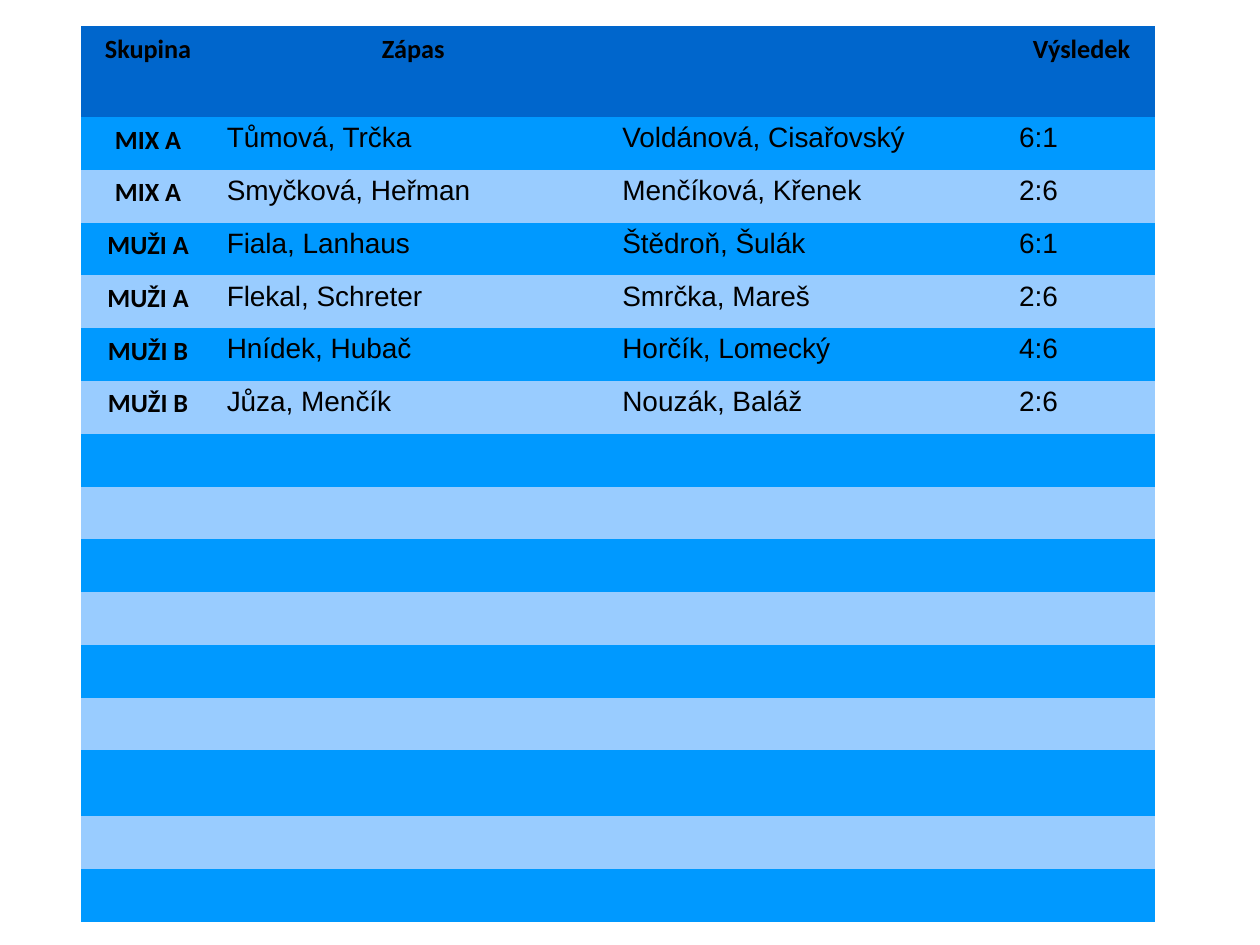
from lxml.etree import SubElement
from pptx import Presentation
from pptx.dml.color import RGBColor
from pptx.enum.text import PP_ALIGN
from pptx.oxml.ns import qn
from pptx.util import Inches, Pt

HEADINGS = ("Skupina", "Zápas", "", "Výsledek")
MATCHES = (
    ("MIX A", "Tůmová, Trčka", "Voldánová, Cisařovský", "6:1"),
    ("MIX A", "Smyčková, Heřman", "Menčíková, Křenek", "2:6"),
    ("MUŽI A", "Fiala, Lanhaus", "Štědroň, Šulák", "6:1"),
    ("MUŽI A", "Flekal, Schreter", "Smrčka, Mareš", "2:6"),
    ("MUŽI B", "Hnídek, Hubač", "Horčík, Lomecký", "4:6"),
    ("MUŽI B", "Jůza, Menčík", "Nouzák, Baláž", "2:6"),
)
EMPTY_MATCHES = 9
COLUMN_WIDTHS = (1.07, 3.14, 3.15, 1.17)
HEADER_HEIGHT = 0.72
TALL_ROW, TALL_HEIGHT = 13, 0.52
HEADER_FILL = "0066CC"
BAND_FILLS = ("0099FF", "99CCFF")


def colour(value):
    return RGBColor.from_string(value)


def add_borders(cell, value, width):
    properties = cell._tc.get_or_add_tcPr()
    for side in ("lnL", "lnR", "lnT", "lnB"):
        border = SubElement(properties, qn(f"a:{side}"), w=str(Pt(width)))
        SubElement(SubElement(border, qn("a:solidFill")), qn("a:srgbClr"), val=value)


def write_entry(cell, wording, is_label):
    cell.margin_left = cell.margin_right = Inches(0.09)
    cell.margin_top = Inches(0.05 if is_label else 0.06)
    cell.margin_bottom = Inches(0.05)
    paragraph = cell.text_frame.paragraphs[0]
    paragraph.alignment = PP_ALIGN.CENTER if is_label else PP_ALIGN.LEFT
    paragraph.line_spacing = 1.02 if is_label else 0.93
    run = paragraph.add_run()
    run.text = wording
    run.font.name = "Calibri" if is_label else "Arial"
    run.font.size = Pt(15 if is_label else 16)
    run.font.bold = is_label
    run.font.color.rgb = colour("000000")


def add_results(slide, left, top, width, height):
    blank = ("",) * len(HEADINGS)
    entries = (HEADINGS, *MATCHES, *(blank,) * EMPTY_MATCHES)
    results = slide.shapes.add_table(
        len(entries), len(HEADINGS), left, top, width, height
    ).table
    results.first_row = results.horz_banding = False

    for column, share in zip(results.columns, COLUMN_WIDTHS):
        column.width = int(width * share / sum(COLUMN_WIDTHS))

    special_heights = {0: Inches(HEADER_HEIGHT), TALL_ROW: Inches(TALL_HEIGHT)}
    regular_height = (height - sum(special_heights.values())) // (
        len(entries) - len(special_heights)
    )
    for row_index, entry in enumerate(entries):
        results.rows[row_index].height = special_heights.get(row_index, regular_height)
        fill = BAND_FILLS[(row_index - 1) % 2] if row_index else HEADER_FILL
        for column_index, wording in enumerate(entry):
            cell = results.cell(row_index, column_index)
            add_borders(cell, "FFFFFF", 0.03)
            cell.fill.solid()
            cell.fill.fore_color.rgb = colour(fill)
            if wording:
                write_entry(cell, wording, row_index == 0 or column_index == 0)


def main():
    presentation = Presentation()
    presentation.slide_width = Inches(10)
    presentation.slide_height = Inches(7.5)
    slide = presentation.slides.add_slide(presentation.slide_layouts[6])
    add_results(slide, Inches(0.64), Inches(0.21), Inches(8.53), Inches(7.11))
    presentation.save("out.pptx")


if __name__ == "__main__":
    main()
